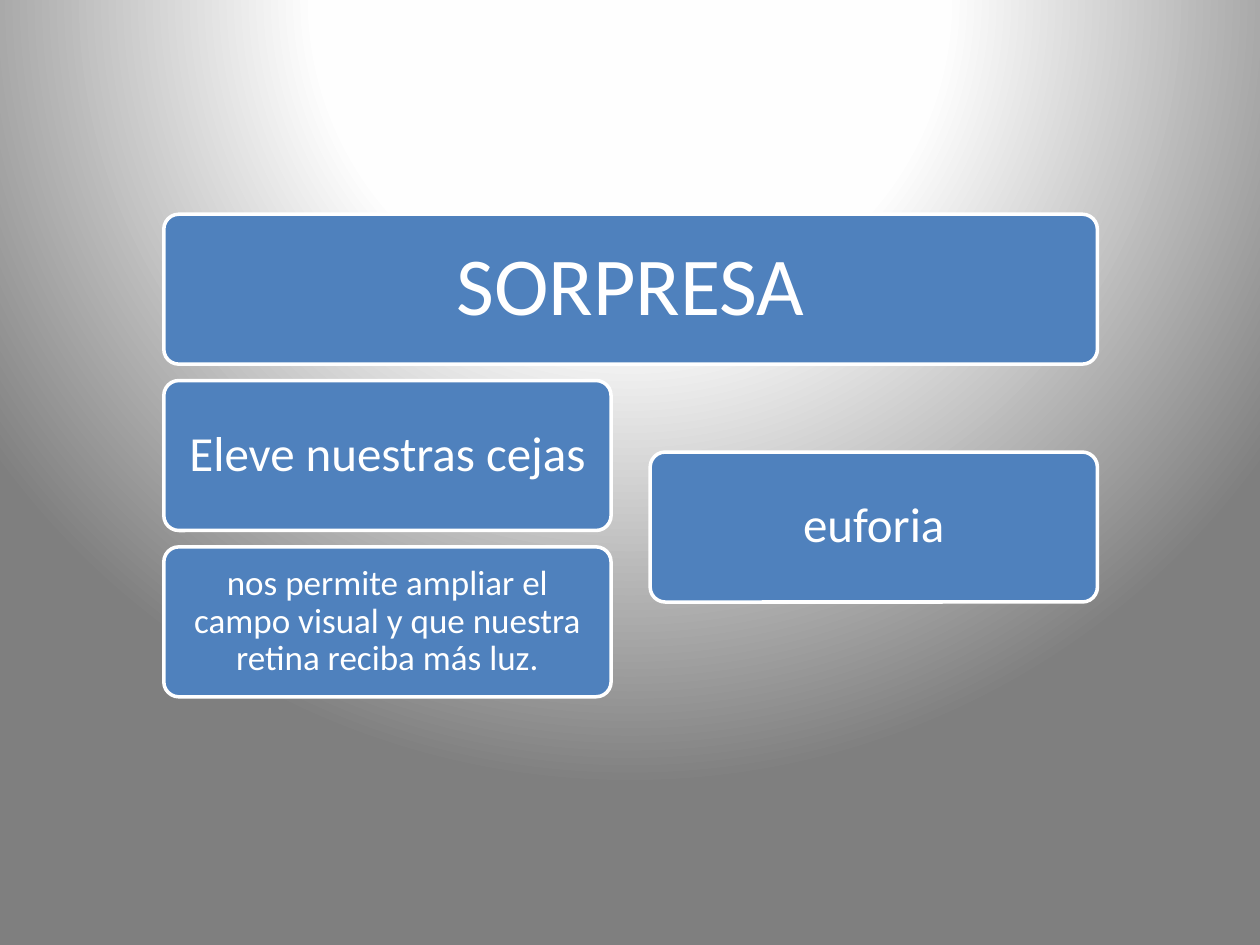
from pptx import Presentation
from pptx.dml.color import RGBColor
from pptx.enum.shapes import MSO_SHAPE
from pptx.enum.text import MSO_ANCHOR, PP_ALIGN
from pptx.oxml import parse_xml
from pptx.oxml.ns import nsdecls
from pptx.util import Inches, Pt

ROUNDED = MSO_SHAPE.ROUNDED_RECTANGLE
MIDDLE = MSO_ANCHOR.MIDDLE
CENTER = PP_ALIGN.CENTER
BLUE = RGBColor(0x4F, 0x81, 0xBD)
WHITE = RGBColor(0xFF, 0xFF, 0xFF)
FONT = "Calibri"

# text, column, row, columns spanned, font size, inset
BOXES = [
    ("SORPRESA", 0, 0, 2, 47, 0.2),
    ("Eleve nuestras cejas", 0, 1, 1, 28, 0.12),
    ("nos permite ampliar el campo visual y que nuestra retina reciba más luz.",
     0, 2, 1, 20, 0.08),
    ("euforia", 1, 1.43, 1, 28, 0.12),
]
LEFT, TOP = 1.3, 1.7
BOX_W, BOX_H = 3.55, 1.19
COL_STEP, ROW_STEP = 3.86, 1.32

GRADIENT = [(0, "FFFFFF"), (40, "FEFEFE"), (100, "7F7F7F")]


def set_background(s):
    """Fill the background with a circular gradient centred above the slide."""
    stops = "".join(
        f'<a:gs pos="{pos * 1000}"><a:srgbClr val="{color}"/></a:gs>'
        for pos, color in GRADIENT)
    s.element.cSld.insert(0, parse_xml(
        f'<p:bg {nsdecls("p", "a")}><p:bgPr><a:gradFill rotWithShape="1">'
        f'<a:gsLst>{stops}</a:gsLst><a:path path="circle">'
        '<a:fillToRect l="50000" t="-80000" r="50000" b="180000"/></a:path>'
        '</a:gradFill><a:effectLst/></p:bgPr></p:bg>'))


def add_box(s, text, *, left, top, width, size, inset):
    sp = s.shapes.add_shape(ROUNDED, Inches(left), Inches(top),
                            Inches(width), Inches(BOX_H))
    sp.adjustments[0] = 0.1
    sp.shadow.inherit = False
    sp.fill.solid()
    sp.fill.fore_color.rgb = BLUE
    sp.line.color.rgb = WHITE
    sp.line.width = Pt(2)
    tf = sp.text_frame
    tf.word_wrap = True
    tf.vertical_anchor = MIDDLE
    tf.margin_left = tf.margin_right = Inches(inset)
    tf.margin_top = tf.margin_bottom = Inches(inset)
    p = tf.paragraphs[0]
    p.alignment = CENTER
    p.line_spacing = 0.9
    r = p.add_run()
    r.text = text
    r.font.name = FONT
    r.font.size = Pt(size)
    r.font.color.rgb = WHITE


def main():
    prs = Presentation()
    prs.slide_width, prs.slide_height = Inches(10), Inches(7.5)
    s = prs.slides.add_slide(prs.slide_layouts[6])
    set_background(s)
    for text, col, row, span, size, inset in BOXES:
        add_box(s, text, left=LEFT + col * COL_STEP, top=TOP + row * ROW_STEP,
                width=BOX_W + (span - 1) * COL_STEP, size=size, inset=inset)
    prs.save("out.pptx")


if __name__ == "__main__":
    main()
